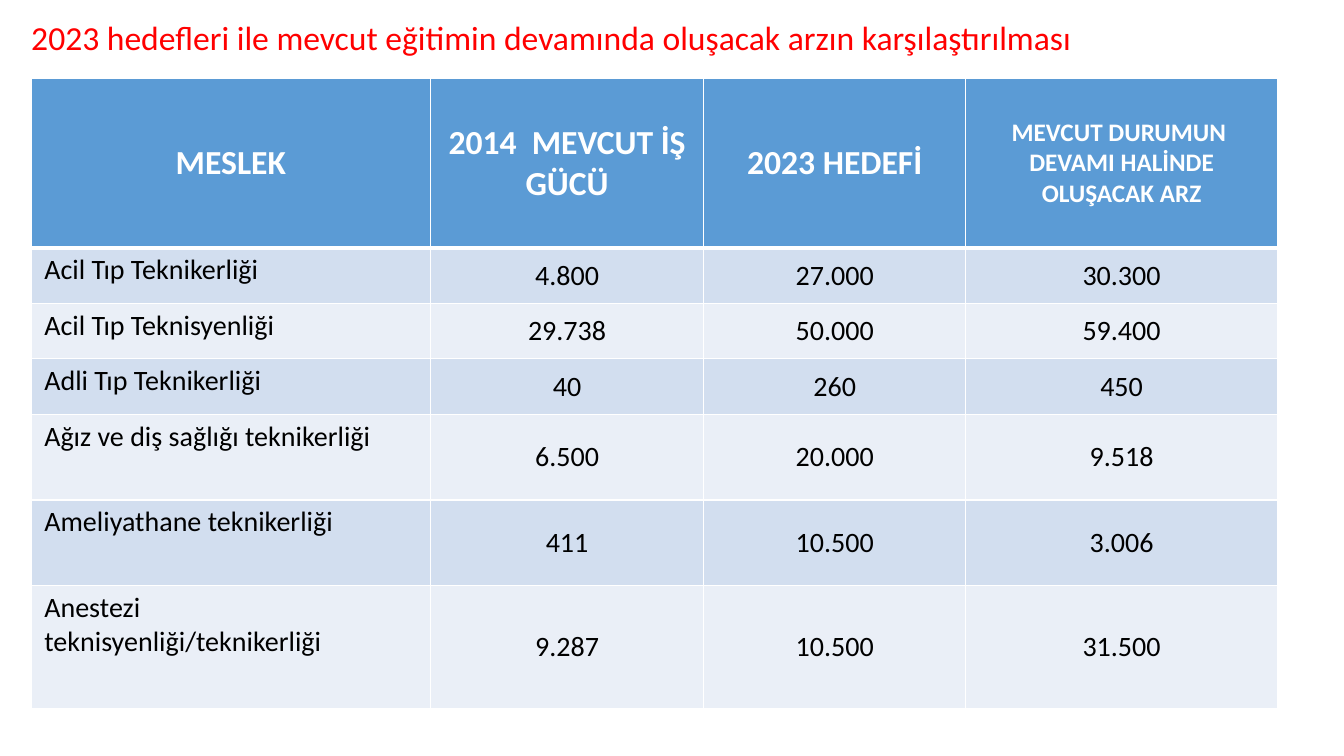
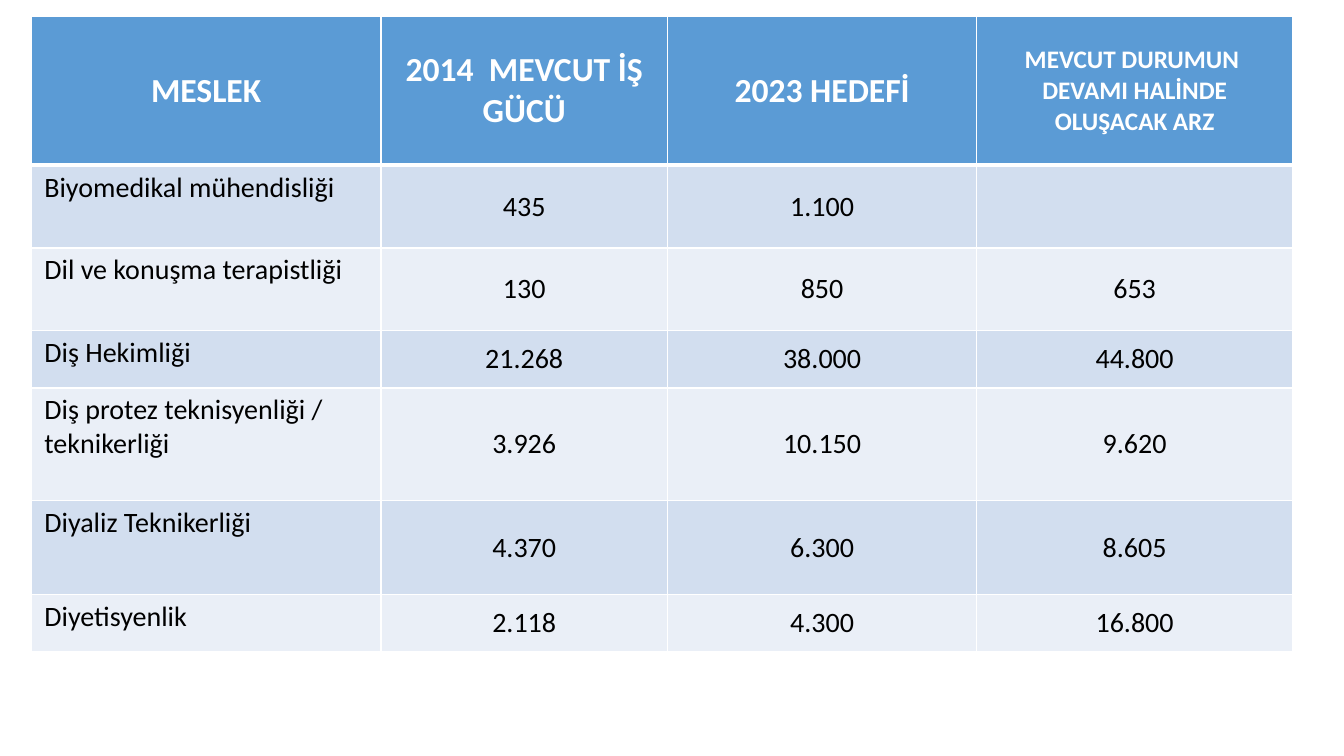
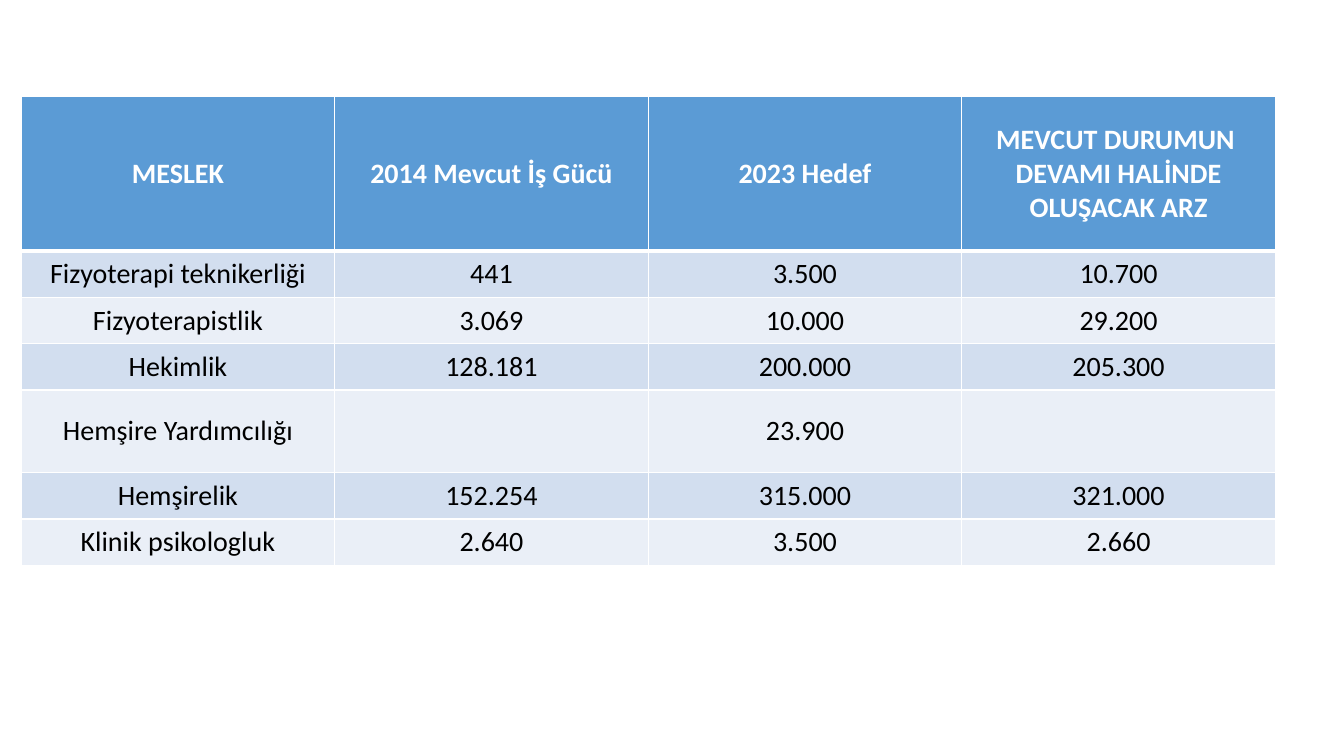
from dataclasses import dataclass

from lxml import etree
from pptx import Presentation
from pptx.dml.color import RGBColor
from pptx.enum.text import MSO_ANCHOR, MSO_AUTO_SIZE, PP_ALIGN
from pptx.oxml.ns import qn
from pptx.slide import Slide
from pptx.table import _Cell
from pptx.text.text import TextFrame
from pptx.util import Inches, Pt

LEFT, CENTER = PP_ALIGN.LEFT, PP_ALIGN.CENTER
TOP, MIDDLE = MSO_ANCHOR.TOP, MSO_ANCHOR.MIDDLE
NO_AUTOFIT = MSO_AUTO_SIZE.NONE
TITLE_ONLY_LAYOUT, BLANK_LAYOUT = 5, 6


@dataclass(frozen=True)
class Theme:
    font: str = "Calibri"
    title: str = "FF0000"
    header: str = "5B9BD5"
    header_text: str = "FFFFFF"
    body_text: str = "000000"
    bands: tuple[str, str] = ("D2DEEF", "EAEFF7")
    border: str = "FFFFFF"
    large: int = 24
    body: int = 20
    small: int = 18
    thin: int = 1
    thick: int = 3
    inset_x: float = 0.13
    inset_y: float = 0.05


THEME = Theme()
SUPPLY_HEADING = "MEVCUT DURUMUN  DEVAMI HALİNDE OLUŞACAK ARZ"
HEADINGS = ("MESLEK", "2014  MEVCUT İŞ GÜCÜ", "2023 HEDEFİ", SUPPLY_HEADING)
HEADING_SIZES = (THEME.large, THEME.large, THEME.large, THEME.small)


@dataclass(frozen=True)
class WorkforceTable:
    left: float
    top: float
    column_widths: tuple[float, ...]
    row_heights: tuple[float, ...]
    occupations: tuple[tuple[str, str, str, str], ...]
    headings: tuple[str, ...] = HEADINGS
    heading_sizes: tuple[int, ...] = HEADING_SIZES
    names_centered: bool = False
    title: str = ""


SLIDES = (
    WorkforceTable(
        title="2023 hedefleri ile mevcut eğitimin devamında oluşacak arzın karşılaştırılması",
        left=0.31,
        top=0.78,
        column_widths=(3.96, 2.71, 2.6, 3.09),
        row_heights=(1.68, 0.55, 0.55, 0.55, 0.85, 0.85, 1.22),
        occupations=(
            ("Acil Tıp Teknikerliği", "4.800", "27.000", "30.300"),
            ("Acil Tıp Teknisyenliği", "29.738", "50.000", "59.400"),
            ("Adli Tıp Teknikerliği", "40", "260", "450"),
            ("Ağız ve diş sağlığı teknikerliği", "6.500", "20.000", "9.518"),
            ("Ameliyathane teknikerliği", "411", "10.500", "3.006"),
            ("Anestezi teknisyenliği/teknikerliği", "9.287", "10.500", "31.500"),
        ),
    ),
    WorkforceTable(
        left=0.31,
        top=0.16,
        column_widths=(3.47, 2.84, 3.07, 3.13),
        row_heights=(1.48, 0.82, 0.82, 0.57, 1.12, 0.93, 0.57),
        occupations=(
            ("Biyomedikal mühendisliği", "435", "1.100", ""),
            ("Dil ve konuşma terapistliği", "130", "850", "653"),
            ("Diş Hekimliği", "21.268", "38.000", "44.800"),
            ("Diş protez teknisyenliği / teknikerliği", "3.926", "10.150", "9.620"),
            ("Diyaliz Teknikerliği", "4.370", "6.300", "8.605"),
            ("Diyetisyenlik", "2.118", "4.300", "16.800"),
        ),
    ),
    WorkforceTable(
        left=0.21,
        top=0.96,
        column_widths=(3.11,) * 4,
        row_heights=(1.53, 0.46, 0.46, 0.46, 0.82, 0.46, 0.46),
        headings=("MESLEK", "2014 Mevcut İş Gücü", "2023 Hedef", SUPPLY_HEADING),
        heading_sizes=(THEME.body,) * 4,
        names_centered=True,
        occupations=(
            ("Fizyoterapi teknikerliği", "441", "3.500", "10.700"),
            ("Fizyoterapistlik", "3.069", "10.000", "29.200"),
            ("Hekimlik", "128.181", "200.000", "205.300"),
            ("Hemşire Yardımcılığı", "", "23.900", ""),
            ("Hemşirelik", "152.254", "315.000", "321.000"),
            ("Klinik psikologluk", "2.640", "3.500", "2.660"),
        ),
    ),
)


def write(frame: TextFrame, text: str, *, size: int, color: str, bold: bool = False,
          align: PP_ALIGN = CENTER, line_spacing: float = 1.0) -> None:
    paragraph = frame.paragraphs[0]
    paragraph.alignment = align
    paragraph.line_spacing = line_spacing
    paragraph.font.size = Pt(size)
    if not text:
        return
    run = paragraph.add_run()
    run.text = text
    run.font.name = THEME.font
    run.font.size = Pt(size)
    run.font.bold = bold
    run.font.color.rgb = RGBColor.from_string(color)


def set_borders(cell: _Cell, *, top: int, bottom: int) -> None:
    properties = cell._tc.get_or_add_tcPr()
    widths = {"a:lnL": THEME.thin, "a:lnR": THEME.thin, "a:lnT": top, "a:lnB": bottom}
    for position, (side, width) in enumerate(widths.items()):
        border = etree.Element(qn(side), w=str(Pt(width)))
        fill = etree.SubElement(border, qn("a:solidFill"))
        etree.SubElement(fill, qn("a:srgbClr"), val=THEME.border)
        properties.insert(position, border)


def style_cell(cell: _Cell, fill: str, anchor: MSO_ANCHOR) -> None:
    cell.fill.solid()
    cell.fill.fore_color.rgb = RGBColor.from_string(fill)
    cell.vertical_anchor = anchor
    cell.margin_left = cell.margin_right = Inches(THEME.inset_x)
    cell.margin_top = cell.margin_bottom = Inches(THEME.inset_y)


def add_title(slide: Slide, text: str) -> None:
    title = slide.shapes.title
    title.left, title.top = Inches(0.21), Inches(0.16)
    title.width, title.height = Inches(12.46), Inches(0.47)
    frame = title.text_frame
    frame.auto_size = NO_AUTOFIT
    frame.word_wrap = True
    frame.vertical_anchor = MIDDLE
    write(frame, text, size=THEME.large, color=THEME.title, align=LEFT, line_spacing=0.9)


def add_workforce_table(slide: Slide, content: WorkforceTable) -> None:
    rows, columns = len(content.row_heights), len(content.column_widths)
    table = slide.shapes.add_table(
        rows, columns, Inches(content.left), Inches(content.top),
        Inches(sum(content.column_widths)), Inches(sum(content.row_heights)),
    ).table
    for column, width in zip(table.columns, content.column_widths):
        column.width = Inches(width)
    for row, height in zip(table.rows, content.row_heights):
        row.height = Inches(height)

    for index, (heading, size) in enumerate(zip(content.headings, content.heading_sizes)):
        cell = table.cell(0, index)
        style_cell(cell, THEME.header, MIDDLE)
        set_borders(cell, top=THEME.thin, bottom=THEME.thick)
        write(cell.text_frame, heading, size=size, color=THEME.header_text, bold=True)

    for row_index, occupation in enumerate(content.occupations, start=1):
        band = THEME.bands[(row_index - 1) % 2]
        top_border = THEME.thick if row_index == 1 else THEME.thin
        for index, text in enumerate(occupation):
            top_left = index == 0 and not content.names_centered
            cell = table.cell(row_index, index)
            style_cell(cell, band, TOP if top_left else MIDDLE)
            set_borders(cell, top=top_border, bottom=THEME.thin)
            write(cell.text_frame, text, size=THEME.body, color=THEME.body_text,
                  align=LEFT if top_left else CENTER)


def main() -> None:
    deck = Presentation()
    deck.slide_width, deck.slide_height = Inches(13.33), Inches(7.5)
    for content in SLIDES:
        layout = TITLE_ONLY_LAYOUT if content.title else BLANK_LAYOUT
        slide = deck.slides.add_slide(deck.slide_layouts[layout])
        add_workforce_table(slide, content)
        if content.title:
            add_title(slide, content.title)
    deck.save("out.pptx")


if __name__ == "__main__":
    main()
